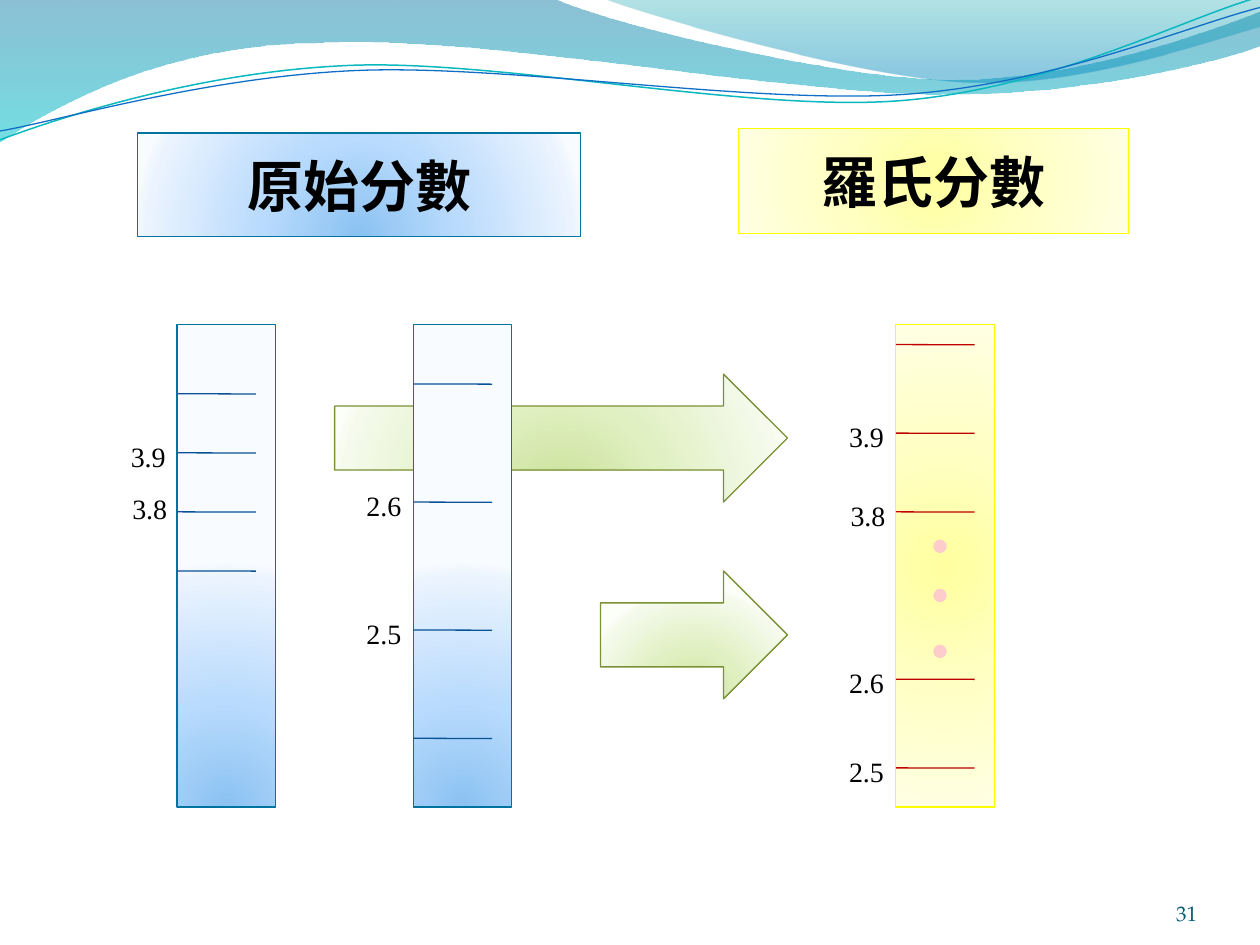
from dataclasses import dataclass
from math import cos, radians, sin

from lxml.etree import SubElement
from pptx import Presentation
from pptx.dml.color import RGBColor
from pptx.enum.shapes import MSO_CONNECTOR, MSO_SHAPE
from pptx.enum.text import MSO_ANCHOR, MSO_AUTO_SIZE, PP_ALIGN
from pptx.oxml import parse_xml
from pptx.oxml.ns import nsdecls, qn
from pptx.util import Pt

SERIF = "TeX Gyre Pagella"
TIMES = "Times New Roman"
LOW_CENTER = '<a:path path="circle"><a:fillToRect l="50000" t="130000" r="50000" b="-30000"/></a:path>'
CENTER = '<a:path path="circle"><a:fillToRect l="50000" t="50000" r="50000" b="50000"/></a:path>'
DOWN = '<a:lin ang="5400000" scaled="0"/>'
BAR_TOP, BAR_WIDTH, BAR_HEIGHT = 185.6, 56.25, 275.6
TICK_LENGTH, TICK_DROP = 45, 0.13
LABEL_HEIGHT = 26.6
WAVE_TILT = -2.7


@dataclass(frozen=True)
class Gradient:
    stops: tuple
    direction: str


@dataclass(frozen=True)
class Style:
    gradient: Gradient
    line: str


@dataclass(frozen=True)
class Wave:
    start: tuple
    segments: tuple
    gradient: Gradient | None = None
    line: str = ""
    width: float = 0
    center: tuple = (0, 0)


@dataclass(frozen=True)
class Label:
    text: str
    left: float
    top: float
    width: float


@dataclass(frozen=True)
class Scale:
    left: float
    style: Style
    tick_color: str
    ticks: tuple
    labels: tuple


BLUE = Style(Gradient(((0, "8BC2F1", 100), (43, "B9DBFD", 100), (93, "EAF3FE", 100),
                       (100, "F8FBFF", 100)), LOW_CENTER), "0074A1")
GREEN = Style(Gradient(((0, "C9DF97", 100), (43, "E0F0C1", 100), (93, "F5FAEC", 100),
                        (100, "FCFEF8", 100)), LOW_CENTER), "7B9135")
YELLOW = Style(Gradient(((0, "FFFFA0", 100), (50, "FFFFC5", 100), (100, "FFFFE3", 100)),
                        CENTER), "FFFF00")

FILLED_WAVES = (
    Wave((0, -0.7),
         ((316.8, -0.7), (342.7, 12.2, 478.1, 45.4, 545.8, 45.4),
          (614.2, 45.4, 689.8, 18.7, 720, 6.5), (720.7, 25.9),
          (707.8, 31.7, 626.4, 54.7, 537.1, 54), (447.8, 54, 275, 20.2, 185, 24.5),
          (92.9, 25.2, 33.1, 59.8, -0.7, 81.4)),
         Gradient(((0, "0074A1", 45), (100, "00C6CF", 55)), DOWN)),
    Wave((344.9, -0.7),
         ((366.5, 7.9, 491, 44.6, 553.7, 46.8), (616.3, 49.7, 691.9, 23, 720, 15.1), (720, 0)),
         Gradient(((0, "00A1A9", 30), (80, "008BBF", 45)), DOWN)),
)
LINE_WAVES = (
    Wave((0, 79.9),
         ((34.6, 67, 113.8, 41, 199.4, 37.4), (284.4, 33.8, 427, 64.1, 513.4, 57.6),
          (599.8, 51.1, 675.4, 10.8, 718.6, -1.4)),
         line="0AB8BF", width=0.85, center=(359.3, 41.4)),
    Wave((0, 74.9),
         ((33.8, 69.1, 118.1, 43.9, 203.8, 40.3), (290.2, 36.7, 429.8, 59.8, 516.2, 54),
          (601.9, 48.2, 677.5, 15.1, 720, 4.3)),
         line="0F6FC6", width=0.75, center=(359.6, 42.5)),
)

RAW_SCALES = (
    Scale(101.25, BLUE, "095295", tuple(225 + 33.75 * i for i in range(4)),
          (Label("3.9", 67.7, 247.7, 45), Label("3.8", 68.5, 277.3, 43.8))),
    Scale(236.25, BLUE, "095295", (219.4, 286.9, 360, 421.9),
          (Label("2.6", 202.3, 275.8, 45), Label("2.5", 202.3, 348.8, 43.8))),
)
RASCH_SCALE = Scale(511.9, YELLOW, "C00000", (196.9, 247.5, 292.5, 388.1, 438.8),
                    (Label("3.9", 478.1, 236.2, 45), Label("3.8", 478.9, 281.5, 43.8),
                     Label("2.6", 478.1, 376.6, 45), Label("2.5", 478.1, 427.7, 43.8)))


def rgb(value: str) -> RGBColor:
    return RGBColor.from_string(value)


def fill_gradient(sp, gradient: Gradient) -> None:
    stops = "".join(
        f'<a:gs pos="{pos * 1000}"><a:srgbClr val="{color}"><a:alpha val="{alpha * 1000}"/>'
        f"</a:srgbClr></a:gs>" for pos, color, alpha in gradient.stops)
    sp.fill.gradient()
    old = sp.element.spPr.find(qn("a:gradFill"))
    new = parse_xml(f'<a:gradFill {nsdecls("a")} rotWithShape="1"><a:gsLst>{stops}</a:gsLst>'
                    f"{gradient.direction}</a:gradFill>")
    sp.element.spPr.replace(old, new)


def add_run(p, text: str, size: float, font: str, color: str, bold: bool = False) -> None:
    r = p.add_run()
    r.text = text
    r.font.size = Pt(size)
    r.font.name = font
    r.font.bold = bold
    r.font.color.rgb = rgb(color)


def add_box(shapes, kind, left: float, top: float, width: float, height: float, style: Style):
    sp = shapes.add_shape(kind, Pt(left), Pt(top), Pt(width), Pt(height))
    sp.shadow.inherit = False
    fill_gradient(sp, style.gradient)
    sp.line.color.rgb = rgb(style.line)
    sp.line.width = Pt(0.75)
    return sp


def add_heading(shapes, text: str, left: float, top: float, width: float, height: float,
                style: Style) -> None:
    tf = add_box(shapes, MSO_SHAPE.RECTANGLE, left, top, width, height, style).text_frame
    tf.vertical_anchor = MSO_ANCHOR.MIDDLE
    p = tf.paragraphs[0]
    p.alignment = PP_ALIGN.CENTER
    add_run(p, text, 32, SERIF, "000000", True)


def turn(point: tuple, center: tuple, degrees: float) -> tuple:
    c, s = cos(radians(degrees)), sin(radians(degrees))
    dx, dy = point[0] - center[0], point[1] - center[1]
    return center[0] + dx * c - dy * s, center[1] + dx * s + dy * c


def bend_segments(sp, segments: tuple) -> None:
    lines = iter(list(sp.element.spPr.iter(qn("a:lnTo"))))
    for segment in segments:
        line = next(lines)
        if len(segment) == 6:
            line.addprevious(curve := parse_xml(f'<a:cubicBezTo {nsdecls("a")}/>'))
            for part in (line, next(lines), next(lines)):
                curve.append(part[0])
                part.getparent().remove(part)


def add_wave(shapes, wave: Wave) -> None:
    tilt = 0 if wave.gradient else WAVE_TILT
    points = [wave.start]
    for segment in wave.segments:
        points += zip(segment[::2], segment[1::2])
    vertices = [(Pt(x), Pt(y)) for x, y in (turn(pt, wave.center, -tilt) for pt in points)]
    builder = shapes.build_freeform(*vertices[0], scale=1.0)
    builder.add_line_segments(vertices[1:], close=wave.gradient is not None)
    sp = builder.convert_to_shape()
    bend_segments(sp, wave.segments)
    sp.rotation = tilt
    sp.shadow.inherit = False
    if wave.gradient:
        fill_gradient(sp, wave.gradient)
        sp.line.fill.background()
    else:
        sp.fill.background()
        sp.line.color.rgb = rgb(wave.line)
        sp.line.width = Pt(wave.width)


def add_tick(shapes, left: float, y: float, color: str) -> None:
    tick = shapes.add_connector(MSO_CONNECTOR.STRAIGHT, Pt(left), Pt(y),
                                Pt(left + TICK_LENGTH), Pt(y + TICK_DROP))
    tick.line.color.rgb = rgb(color)
    tick.line.width = Pt(0.75)
    SubElement(tick.element.spPr, qn("a:effectLst"))


def add_scale(shapes, scale: Scale) -> None:
    add_box(shapes, MSO_SHAPE.RECTANGLE, scale.left, BAR_TOP, BAR_WIDTH, BAR_HEIGHT, scale.style)
    for y in scale.ticks:
        add_tick(shapes, scale.left, y, scale.tick_color)
    for label in scale.labels:
        tf = shapes.add_textbox(Pt(label.left), Pt(label.top),
                                Pt(label.width), Pt(LABEL_HEIGHT)).text_frame
        tf.word_wrap = True
        tf.auto_size = MSO_AUTO_SIZE.SHAPE_TO_FIT_TEXT
        add_run(tf.paragraphs[0], label.text, 16, TIMES, "000000")


def add_dot(shapes, left: float, top: float) -> None:
    sp = shapes.add_shape(MSO_SHAPE.OVAL, Pt(left), Pt(top), Pt(5.6), Pt(5.6))
    sp.shadow.inherit = False
    sp.fill.solid()
    sp.fill.fore_color.rgb = rgb("FFCCCC")
    sp.line.color.rgb = rgb("FFCCCC")
    sp.line.width = Pt(2)


def add_page_number(shapes, text: str) -> None:
    tf = shapes.add_textbox(Pt(624), Pt(500.4), Pt(60), Pt(28.8)).text_frame
    tf.word_wrap = True
    tf.vertical_anchor = MSO_ANCHOR.BOTTOM
    tf.margin_left = tf.margin_right = tf.margin_top = tf.margin_bottom = 0
    p = tf.paragraphs[0]
    p.alignment = PP_ALIGN.RIGHT
    add_run(p, text, 12, SERIF, "045D75")


def main() -> None:
    prs = Presentation()
    prs.slide_width, prs.slide_height = Pt(720), Pt(540)
    s = prs.slides.add_slide(prs.slide_layouts[6])
    for wave in FILLED_WAVES:
        add_wave(s.shapes, wave)
    lines = s.shapes.add_group_shape().shapes
    for wave in LINE_WAVES:
        add_wave(lines, wave)
    add_box(s.shapes, MSO_SHAPE.RIGHT_ARROW, 191.25, 213.75, 258.75, 73.1, GREEN)
    add_page_number(s.shapes, "31")
    add_heading(s.shapes, "原始分數", 78.75, 76, 253.1, 59.2, BLUE)
    add_heading(s.shapes, "羅氏分數", 421.9, 73.4, 222.8, 60, YELLOW)
    for scale in RAW_SCALES:
        add_scale(s.shapes, scale)
    add_box(s.shapes, MSO_SHAPE.RIGHT_ARROW, 343.1, 326.25, 106.9, 73.1, GREEN)
    rasch = s.shapes.add_group_shape().shapes
    add_scale(rasch, RASCH_SCALE)
    for top in (309.4, 337.5, 369.4):
        add_dot(rasch, 534.4, top)
    prs.save("out.pptx")


if __name__ == "__main__":
    main()
